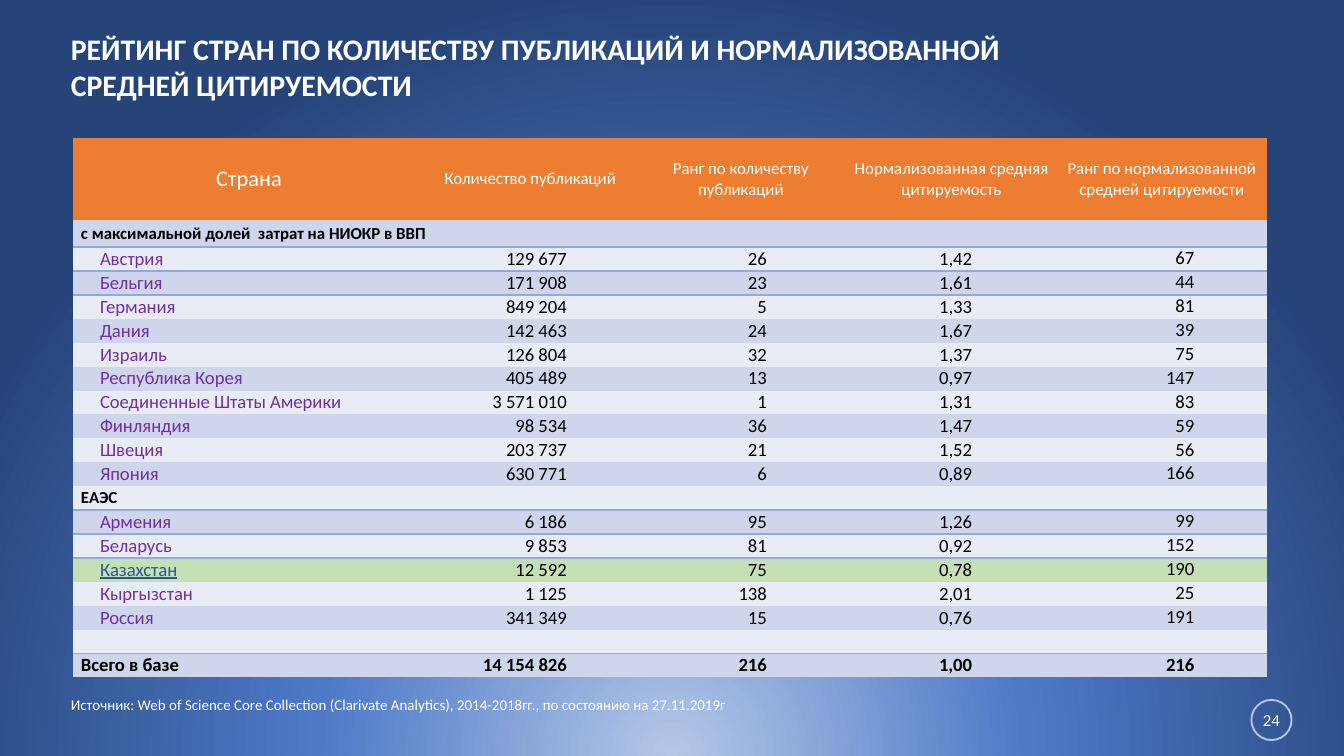
"""Build a slide ranking countries by publications and normalised citation impact."""
from lxml.etree import SubElement
from pptx import Presentation
from pptx.dml.color import RGBColor
from pptx.enum.shapes import MSO_SHAPE as Shape
from pptx.enum.text import MSO_ANCHOR as Anchor, MSO_AUTO_SIZE as AutoSize, PP_ALIGN as Align
from pptx.oxml import parse_xml
from pptx.oxml.ns import nsdecls, qn
from pptx.util import Cm, Pt

COLORS = {
    "white": "FFFFFF", "black": "000000", "header": "ED7D31", "band_dark": "CFD5EA",
    "band_light": "E9EBF5", "highlight": "C5E0B4", "country": "7030A0",
    "home_country": "2F5597", "rule": "8FAADC", "ring": "B4C7E7",
}
BACKGROUND_STOPS = [(0, "B4C7E7"), (46, "4D79C7"), (100, "264478")]
NO_STYLE = "{2D5ABB26-0587-4C30-8999-92F81FD0307C}"
FONT = "Calibri"
TITLE = ["РЕЙТИНГ СТРАН ПО КОЛИЧЕСТВУ ПУБЛИКАЦИЙ И НОРМАЛИЗОВАННОЙ", "СРЕДНЕЙ ЦИТИРУЕМОСТИ"]
SOURCE = ("Источник: Web of Science Core Collection (Clarivate Analytics), "
          "2014-2018гг., по состоянию на 27.11.2019г")
HEADERS = ["Страна", "Количество публикаций", "Ранг по количеству публикаций",
           "Нормализованная средняя цитируемость",
           "Ранг по нормализованной средней цитируемости"]
HOME_COUNTRY = "Казахстан"
TOTAL = "Всего в базе"
ROWS = [
    ["с максимальной долей  затрат на НИОКР в ВВП"],
    ["Австрия", "129 677", "26", "1,42", "67"],
    ["Бельгия", "171 908", "23", "1,61", "44"],
    ["Германия", "849 204", "5", "1,33", "81"],
    ["Дания", "142 463", "24", "1,67", "39"],
    ["Израиль", "126 804", "32", "1,37", "75"],
    ["Республика Корея", "405 489", "13", "0,97", "147"],
    ["Соединенные Штаты Америки", "3 571 010", "1", "1,31", "83"],
    ["Финляндия", "98 534", "36", "1,47", "59"],
    ["Швеция", "203 737", "21", "1,52", "56"],
    ["Япония", "630 771", "6", "0,89", "166"],
    ["ЕАЭС"],
    ["Армения", "6 186", "95", "1,26", "99"],
    ["Беларусь", "9 853", "81", "0,92", "152"],
    [HOME_COUNTRY, "12 592", "75", "0,78", "190"],
    ["Кыргызстан", "1 125", "138", "2,01", "25"],
    ["Россия", "341 349", "15", "0,76", "191"],
    [],
    [TOTAL, "14 154 826", "216", "1,00", "216"],
]
COLUMN_WIDTHS = [6.65, 3.98, 3.98, 3.98, 3.97]
RIGHT_INSETS = [0.15, 1.3, 1.5, 1.6, 1.37]
RULED_ROWS = {1, 2, 12, 13, 18}


def rgb(name):
    """Return the named colour."""
    return RGBColor.from_string(COLORS[name])


def write_text(frame, *lines, size=10, color="black", bold=False, underline=False,
               align=Align.LEFT):
    """Fill a text frame with one formatted paragraph per line."""
    for index, line in enumerate(lines):
        paragraph = frame.add_paragraph() if index else frame.paragraphs[0]
        paragraph.alignment = align
        if not line:
            paragraph._p.get_or_add_endParaRPr().set("sz", str(size * 100))
            continue
        run = paragraph.add_run()
        run.text = line
        font = run.font
        font.name, font.size, font.bold, font.underline = FONT, Pt(size), bold, underline
        font.color.rgb = rgb(color)


def add_text_box(slide, box, *lines, wrap=True, **text_format):
    """Add a text box at the given left, top, width and height."""
    frame = slide.shapes.add_textbox(*map(Cm, box)).text_frame
    frame.word_wrap = wrap
    frame.auto_size = AutoSize.SHAPE_TO_FIT_TEXT
    write_text(frame, *lines, **text_format)


def set_background(slide):
    """Give the slide a circular gradient rising from below its lower edge."""
    slide.background.fill.solid()
    stops = "".join(f'<a:gs pos="{position * 1000}"><a:srgbClr val="{color}"/></a:gs>'
                    for position, color in BACKGROUND_STOPS)
    gradient = parse_xml(
        f'<a:gradFill {nsdecls("a")} rotWithShape="1"><a:gsLst>{stops}</a:gsLst>'
        '<a:path path="circle"><a:fillToRect l="50000" t="130000" r="50000" b="-30000"/>'
        '</a:path></a:gradFill>')
    properties = slide._element.cSld.bg.bgPr
    properties.replace(properties[0], gradient)


def add_border(cell, side):
    """Draw a one-point rule on the given side of a cell."""
    line = parse_xml(
        f'<a:{side} {nsdecls("a")} w="12700"><a:solidFill>'
        f'<a:srgbClr val="{COLORS["rule"]}"/></a:solidFill></a:{side}>')
    properties = cell._tc.get_or_add_tcPr()
    fill = properties.find(qn("a:solidFill"))
    fill.addprevious(line)


def format_cell(cell, fill, left=0.15, right=0.15, anchor=Anchor.MIDDLE):
    """Set the fill, insets and anchor of a cell."""
    cell.margin_left, cell.margin_right = Cm(left), Cm(right)
    cell.margin_top = cell.margin_bottom = 0
    cell.vertical_anchor = anchor
    cell.fill.solid()
    cell.fill.fore_color.rgb = rgb(fill)


def fill_row(table, row, values):
    """Fill one body row according to its role."""
    name = values[0] if values else ""
    is_country = len(values) > 1 and name != TOTAL
    is_home = name == HOME_COUNTRY
    band = "highlight" if is_home else "band_dark" if row % 2 else "band_light"
    for column, right in enumerate(RIGHT_INSETS):
        cell = table.cell(row, column)
        text = values[column] if column < len(values) else ""
        is_name = column == 0
        format_cell(cell, band, right=right,
                    left=0.51 if is_name and is_country else 0.15,
                    anchor=Anchor.TOP if column == 4 else Anchor.MIDDLE)
        name_color = "home_country" if is_home else "country"
        write_text(cell.text_frame, text, size=9 if len(values) < 2 else 10,
                   bold=not is_country, underline=is_home and is_name,
                   color=name_color if is_name and is_country else "black",
                   align=Align.LEFT if is_name else Align.RIGHT)
        if row - 1 in RULED_ROWS:
            add_border(cell, "lnT")
        if row in RULED_ROWS:
            add_border(cell, "lnB")


def add_ranking_table(slide):
    """Add the table of countries with its header."""
    height, header_height, section_height = Cm(10.21), Cm(1.55), Cm(0.51)
    table = slide.shapes.add_table(len(ROWS) + 1, len(HEADERS), Cm(1.38), Cm(2.61),
                                   Cm(sum(COLUMN_WIDTHS)), height).table
    table._tbl.tblPr.find(qn("a:tableStyleId")).text = NO_STYLE
    for column, width in zip(table.columns, COLUMN_WIDTHS):
        column.width = Cm(width)
    row_height = (height - header_height - section_height) // (len(ROWS) - 1)
    for row in table.rows:
        row.height = row_height
    table.rows[0].height, table.rows[1].height = header_height, section_height
    for column, header in enumerate(HEADERS):
        cell = table.cell(0, column)
        format_cell(cell, "header")
        write_text(cell.text_frame, header, size=9 if column else 12,
                   color="white", align=Align.CENTER)
    for row, values in enumerate(ROWS, start=1):
        fill_row(table, row, values)
    table.cell(1, 0).merge(table.cell(1, len(HEADERS) - 1))


def add_page_number(slide, number):
    """Add the page number inside a ring."""
    ring = slide.shapes.add_shape(Shape.OVAL, Cm(23.65), Cm(13.23), Cm(0.76), Cm(0.76))
    ring.shadow.inherit = False
    ring.fill.background()
    ring.line.color.rgb = rgb("ring")
    ring.line.width = Pt(1)
    frame = ring.text_frame
    frame.margin_left = frame.margin_right = 0
    frame.word_wrap = False
    frame.vertical_anchor = Anchor.MIDDLE
    write_text(frame, number, size=9, color="white", align=Align.CENTER)


def main():
    """Build and save the slide."""
    presentation = Presentation()
    presentation.slide_width, presentation.slide_height = Cm(25.4), Cm(14.29)
    slide = presentation.slides.add_slide(presentation.slide_layouts[6])
    set_background(slide)
    add_text_box(slide, (1.09, 0.46, 18.44, 1.63), *TITLE, wrap=False,
                 size=16, color="white", bold=True)
    add_ranking_table(slide)
    add_text_box(slide, (1.09, 13.03, 19.41, 0.61), SOURCE, size=8, color="white")
    add_page_number(slide, "24")
    presentation.save("out.pptx")


if __name__ == "__main__":
    main()
